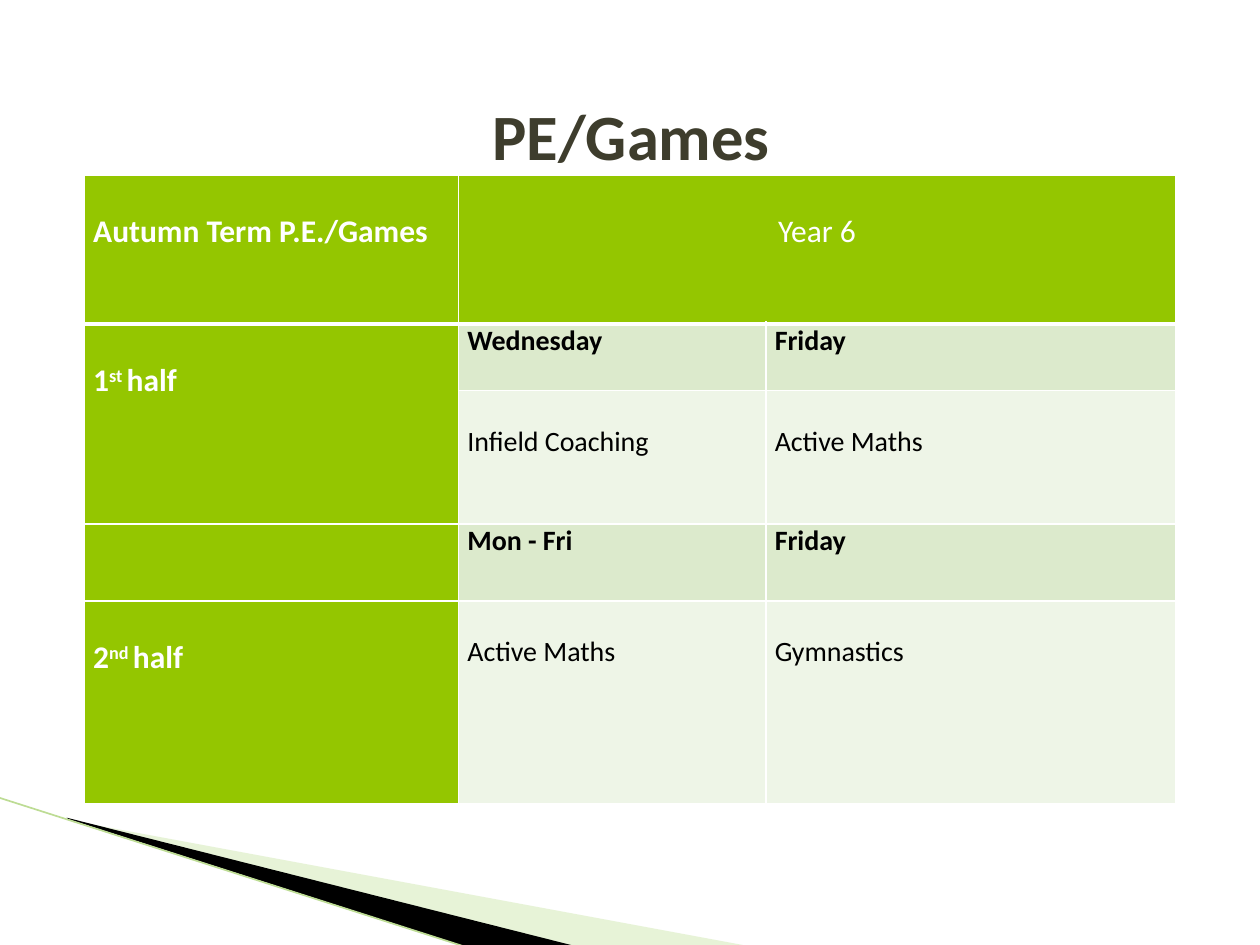
import lxml.etree
import pptx
import pptx.dml.color
import pptx.enum.shapes
import pptx.enum.text
import pptx.oxml
import pptx.oxml.ns
import pptx.util

Inches = pptx.util.Inches
Pt = pptx.util.Pt
CENTER = pptx.enum.text.PP_ALIGN.CENTER
LEFT = pptx.enum.text.PP_ALIGN.LEFT
COLORS = {
    "white": "FFFFFF",
    "black": "000000",
    "title": "3E3D2D",
    "green": "94C600",
    "band": "DCEACC",
    "light": "EEF5E7",
    "wedge": "C3E19D",
    "edge": "BDDC94",
}


def rgb(name):
    return pptx.dml.color.RGBColor.from_string(COLORS[name])


def add_element(parent, tag, **attributes):
    return lxml.etree.SubElement(parent, pptx.oxml.ns.qn(tag), **attributes)


class SlideBuilder:
    font = "Calibri"

    def __init__(self, page):
        self.page = page

    def style(self, span, size, color, bold):
        span.font.name = self.font
        span.font.size = Pt(size)
        span.font.bold = bold
        span.font.color.rgb = rgb(color)

    def wedge(self, points, color, opacity=100):
        corners = [(Inches(x), Inches(y)) for x, y in points]
        builder = self.page.shapes.build_freeform(*corners[0])
        builder.add_line_segments(corners[1:], close=True)
        shape = builder.convert_to_shape()
        shape.shadow.inherit = False
        shape.line.fill.background()
        shape.fill.solid()
        shape.fill.fore_color.rgb = rgb(color)
        if opacity < 100:
            tint = shape.fill._xPr.find(".//" + pptx.oxml.ns.qn("a:srgbClr"))
            add_element(tint, "a:alpha", val=str(opacity * 1000))

    def line(self, start, end, color, width):
        ends = [Inches(value) for value in (*start, *end)]
        line = self.page.shapes.add_connector(
            pptx.enum.shapes.MSO_CONNECTOR.STRAIGHT, *ends)
        line.line.color.rgb = rgb(color)
        line.line.width = Pt(width)
        add_element(line._element.spPr, "a:effectLst")

    def title(self, text, left, top, width, height, size):
        box = self.page.shapes.add_textbox(
            Inches(left), Inches(top), Inches(width), Inches(height))
        frame = box.text_frame
        frame.word_wrap = True
        frame.vertical_anchor = pptx.enum.text.MSO_ANCHOR.MIDDLE
        frame.text = text
        para = frame.paragraphs[0]
        para.alignment = CENTER
        self.style(para.runs[0], size, "title", True)

    def table(self, left, top, widths, heights):
        frame = self.page.shapes.add_table(
            len(heights), len(widths), Inches(left), Inches(top),
            Inches(sum(widths)), Inches(sum(heights)))
        table = frame.table
        for column, width in zip(table.columns, widths):
            column.width = Inches(width)
        for row, height in zip(table.rows, heights):
            row.height = Inches(height)
        return table

    def cell(self, cell, parts, fill, size, color, bold, drop=0, align=LEFT, bottom=1):
        cell.margin_left = cell.margin_right = Inches(0.07)
        cell.margin_top = Inches(drop)
        cell.margin_bottom = 0
        self.borders(cell, bottom)
        cell.fill.solid()
        cell.fill.fore_color.rgb = rgb(fill)
        para = cell.text_frame.paragraphs[0]
        para.alignment = align
        para.font.size = Pt(size)
        for index, part in enumerate(parts):
            span = para.add_run()
            span.text = part
            self.style(span, size, color, bold)
            if index == 1:
                span._r.get_or_add_rPr().set("baseline", "30000")

    def borders(self, cell, bottom):
        properties = cell._tc.get_or_add_tcPr()
        for side, width in (("L", 1), ("R", 1), ("T", 1), ("B", bottom)):
            line = add_element(properties, "a:ln" + side, w=str(Pt(width)))
            fill = add_element(line, "a:solidFill")
            add_element(fill, "a:srgbClr", val=COLORS["white"])


def main():
    deck = pptx.Presentation()
    deck.slide_width = Inches(10)
    deck.slide_height = Inches(7.5)
    slide = SlideBuilder(deck.slides.add_slide(deck.slide_layouts[6]))

    slide.wedge([(0.55, 6.51), (5.95, 7.51), (4.56, 7.51), (0.55, 6.5)], "wedge", 40)
    slide.wedge([(0.53, 6.49), (4.57, 7.51), (3.72, 7.52), (0.54, 6.5)], "black")
    slide.line((-0.01, 6.33), (3.71, 7.52), "edge", 0.95)

    timetable = slide.table(0.67, 1.39, [2.97, 2.44, 3.25], [1.18, 0.53, 1.06, 0.61, 1.61])
    timetable.cell(0, 1).merge(timetable.cell(0, 2))
    timetable.cell(1, 0).merge(timetable.cell(2, 0))

    headings = [["Autumn Term P.E./Games"], ["1", "st ", "half"], [], [], ["2", "nd ", "half"]]
    for row, parts in enumerate(headings):
        slide.cell(timetable.cell(row, 0), parts, "green", 18, "white", True,
                   drop=0.3 if parts else 0, bottom=1 if row else 3)
    for column, parts in ((1, ["Year 6"]), (2, [])):
        slide.cell(timetable.cell(0, column), parts, "green", 18, "white", False,
                   drop=0.3, align=CENTER, bottom=3)

    lessons = [
        ("Wednesday", "Friday"),
        ("Infield Coaching", "Active Maths"),
        ("Mon - Fri", "Friday"),
        ("Active Maths", "Gymnastics"),
    ]
    for row, texts in enumerate(lessons, 1):
        is_day = row % 2 == 1
        for column, text in enumerate(texts, 1):
            slide.cell(timetable.cell(row, column), [text], "band" if is_day else "light",
                       16, "black", is_day, drop=0 if is_day else 0.27)

    slide.title("PE/Games", 0.51, 0.36, 9, 1.42, 36.9)
    deck.save("out.pptx")


if __name__ == "__main__":
    main()
